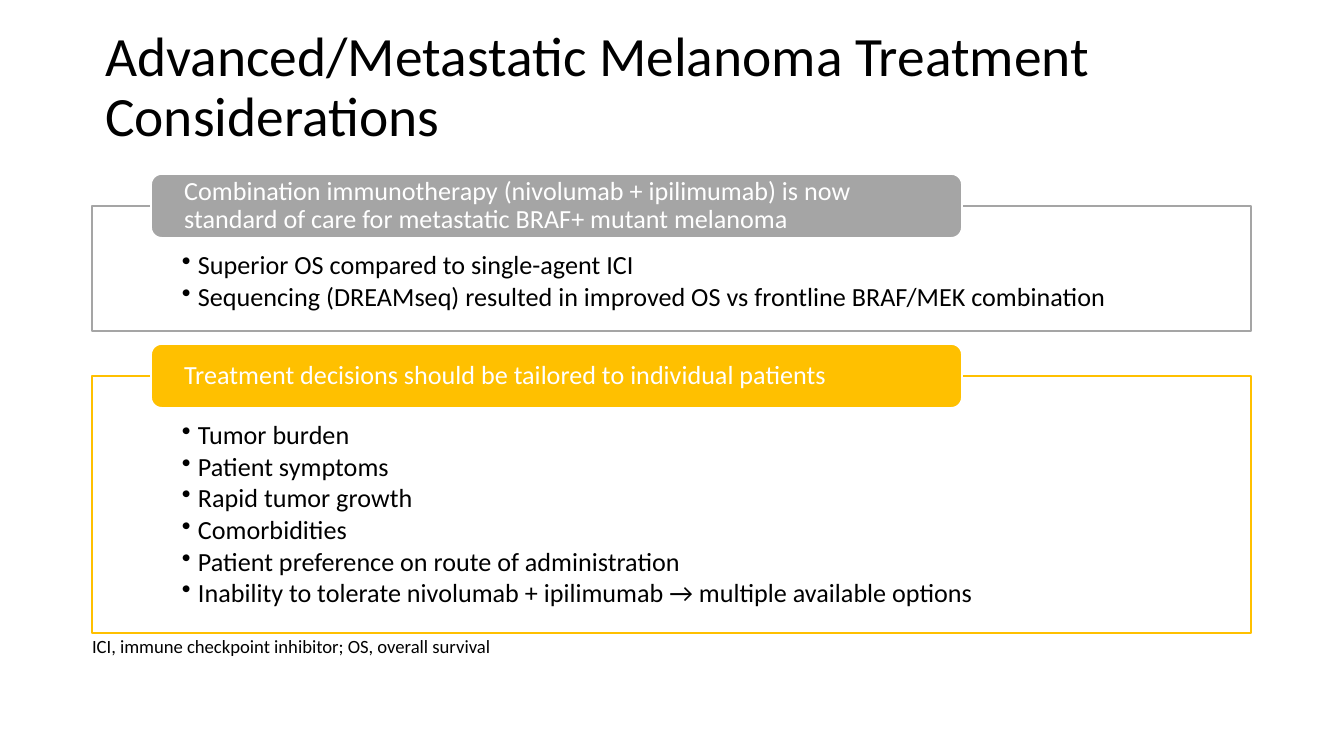
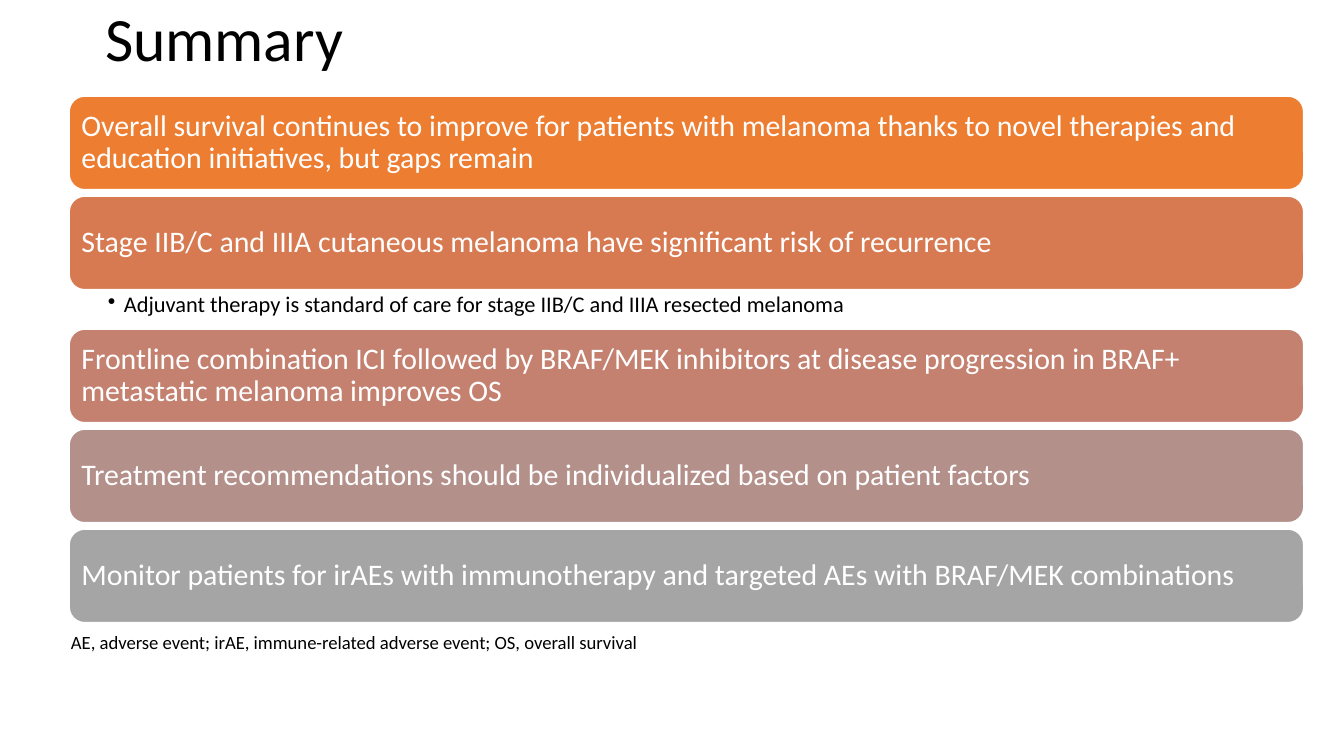
from dataclasses import dataclass

from lxml import etree
from pptx import Presentation
from pptx import util as u
from pptx.dml.color import RGBColor
from pptx.enum import shapes, text
from pptx.oxml import ns

PANELS = [
    ("Combination immunotherapy (nivolumab + ipilimumab) is now standard of care "
     "for metastatic BRAF+ mutant melanoma",
     ["Superior OS compared to single-agent ICI",
      "Sequencing (DREAMseq) resulted in improved OS vs frontline BRAF/MEK combination"]),
    ("Treatment decisions should be tailored to individual patients",
     ["Tumor burden",
      "Patient symptoms",
      "Rapid tumor growth",
      "Comorbidities",
      "Patient preference on route of administration",
      "Inability to tolerate nivolumab + ipilimumab → multiple available options"]),
]

# Each summary bar with the bullets below it
SUMMARY = [
    ("Overall survival continues to improve for patients with melanoma thanks to "
     "novel therapies and education initiatives, but gaps remain", []),
    ("Stage IIB/C and IIIA cutaneous melanoma have significant risk of recurrence",
     ["Adjuvant therapy is standard of care for stage IIB/C and IIIA resected melanoma"]),
    ("Frontline combination ICI followed by BRAF/MEK inhibitors at disease progression "
     "in BRAF+ metastatic melanoma improves OS", []),
    ("Treatment recommendations should be individualized based on patient factors", []),
    ("Monitor patients for irAEs with immunotherapy and targeted AEs with "
     "BRAF/MEK combinations", []),
]


@dataclass(frozen=True)
class Theme:
    font: str = "Calibri"
    black: str = "000000"
    white: str = "FFFFFF"
    panels: tuple = ("A5A5A5", "FFC000")
    bars: tuple = ("ED7D31", "D87A51", "C48170", "B4908B", "A5A5A5")
    panel_size: float = 14
    bar_size: float = 16
    note_size: float = 12
    footer_size: float = 10
    leading: float = 0.9


THEME = Theme()
PX_PER_INCH = 134.4
MARGIN, WIDTH = 92, 1159
BULLET_INDENT = 16


def px(length):
    return u.Emu(round(length * u.Inches(1) / PX_PER_INCH))


def style(paragraph, size, color, leading=THEME.leading):
    paragraph.alignment = text.PP_ALIGN.LEFT
    paragraph.line_spacing = leading
    paragraph.font.name = THEME.font
    paragraph.font.size = u.Pt(size)
    paragraph.font.color.rgb = RGBColor.from_string(color)


def set_frame(shape, insets, anchor):
    frame = shape.text_frame
    frame.word_wrap = True
    frame.vertical_anchor = anchor
    (frame.margin_left, frame.margin_top,
     frame.margin_right, frame.margin_bottom) = map(px, insets)
    return frame


def add_block(page, kind, bounds, fill, line):
    block = page.shapes.add_shape(kind, *map(px, bounds))
    block.shadow.inherit = False
    block.fill.solid()
    block.fill.fore_color.rgb = RGBColor.from_string(fill)
    block.line.color.rgb = RGBColor.from_string(line)
    block.line.width = u.Pt(1)
    return block


def add_label(page, bounds, words, fill, size, insets):
    """Rounded bar with white text."""
    label = add_block(page, shapes.MSO_SHAPE.ROUNDED_RECTANGLE, bounds, fill, THEME.white)
    frame = set_frame(label, insets, text.MSO_ANCHOR.MIDDLE)
    frame.text = words
    style(frame.paragraphs[0], size, THEME.white)


def write_bullets(shape, items, size, insets, space_after):
    frame = set_frame(shape, insets, text.MSO_ANCHOR.TOP)
    for index, item in enumerate(items):
        para = frame.paragraphs[0] if index == 0 else frame.add_paragraph()
        para.text = item
        para.level = 1
        properties = para._p.get_or_add_pPr()
        properties.set("marL", str(px(BULLET_INDENT)))
        properties.set("indent", str(-px(BULLET_INDENT)))
        etree.SubElement(properties, ns.qn("a:buChar"), char="•")
        style(para, size, THEME.black)
        para.space_after = u.Pt(space_after)


def add_page(deck, title, size, top, height):
    page = deck.slides.add_slide(deck.slide_layouts[5])
    box = page.shapes.title
    box.left, box.top, box.width, box.height = map(px, (MARGIN, top, WIDTH, height))
    frame = set_frame(box, (13, 7, 13, 7), text.MSO_ANCHOR.MIDDLE)
    frame.auto_size = text.MSO_AUTO_SIZE.NONE
    frame.text = title
    style(frame.paragraphs[0], size, THEME.black)
    return page


def add_footer(page, words, left, top, width):
    box = page.shapes.add_textbox(*map(px, (left, top, width, 36)))
    frame = set_frame(box, (13, 7, 13, 7), text.MSO_ANCHOR.TOP)
    frame.auto_size = text.MSO_AUTO_SIZE.SHAPE_TO_FIT_TEXT
    frame.text = words
    style(frame.paragraphs[0], THEME.footer_size, THEME.black, leading=1.0)


def add_considerations(deck):
    page = add_page(deck, "Advanced/Metastatic Melanoma Treatment Considerations",
                    29.7, 22, 133)
    top, gap, padding, row = 206, 45, 59, 33
    tab_left, tab_width, tab_height = 151, 811, 64
    for (heading, items), color in zip(PANELS, THEME.panels):
        height = padding + row * len(items)
        panel = add_block(page, shapes.MSO_SHAPE.RECTANGLE,
                          (MARGIN, top, WIDTH, height), THEME.white, color)
        white = panel.fill._xPr.find(".//" + ns.qn("a:srgbClr"))
        etree.SubElement(white, ns.qn("a:alpha"), val="90000")
        write_bullets(panel, items, THEME.panel_size, (90, 46, 90, 15), 1.8)
        add_label(page, (tab_left, top - tab_height // 2, tab_width, tab_height),
                  heading, color, THEME.panel_size, (30, 0, 30, 0))
        top += height + gap
    add_footer(page, "ICI, immune checkpoint inhibitor; OS, overall survival",
               79, 628, 1078)


def add_summary(deck):
    page = add_page(deck, "Summary", 33, 0, 83)
    left, top, width = 69, 96, 1235
    bar_height, note_height, gap = 94, 39, 6
    for (words, notes), color in zip(SUMMARY, THEME.bars):
        add_label(page, (left, top, width, bar_height), words, color,
                  THEME.bar_size, (8, 5, 8, 5))
        top += bar_height
        if notes:
            box = page.shapes.add_textbox(*map(px, (left, top, width, note_height)))
            write_bullets(box, notes, THEME.note_size, (39, 3, 16, 3), 2.4)
            top += note_height
        else:
            top += gap
    add_footer(page, "AE, adverse event; irAE, immune-related adverse event; "
               "OS, overall survival", 58, 624, 754)


def main():
    deck = Presentation()
    deck.slide_width, deck.slide_height = px(1344), px(756)
    add_considerations(deck)
    add_summary(deck)
    deck.save("out.pptx")


if __name__ == "__main__":
    main()
